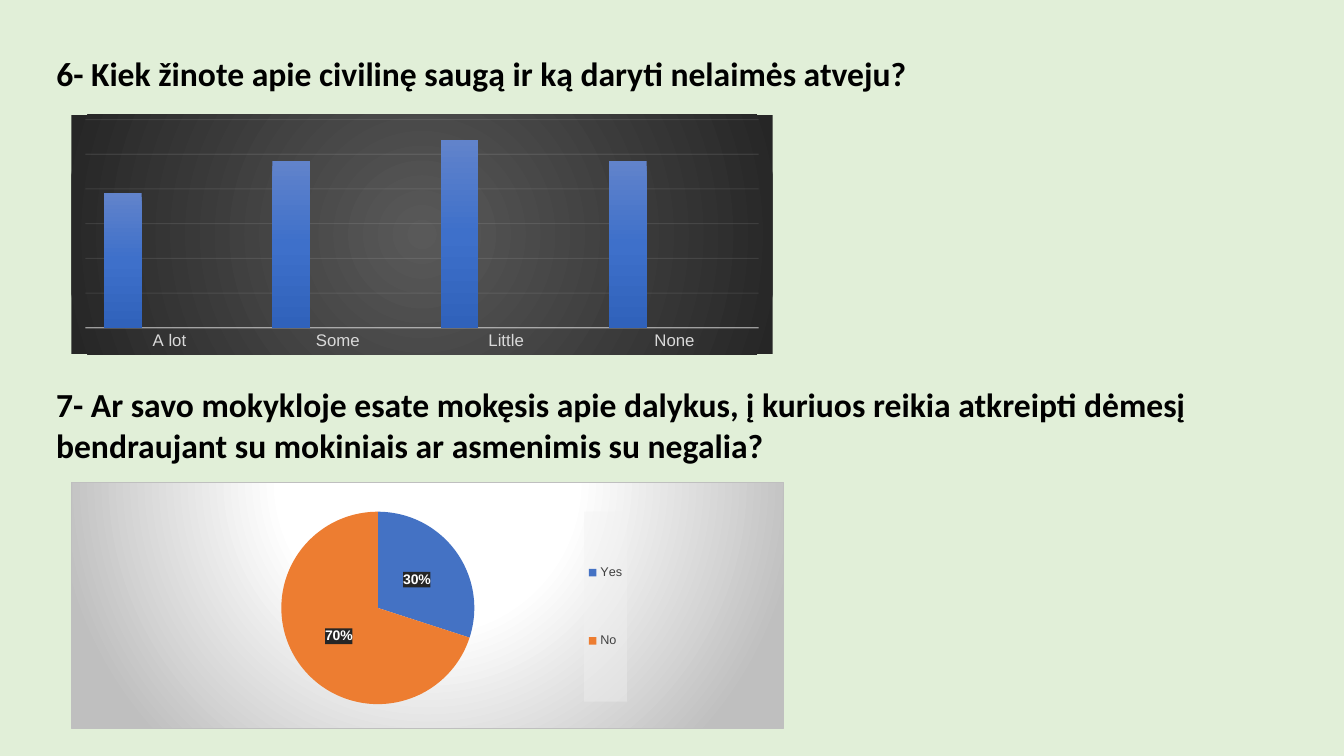
from lxml import etree
from pptx import Presentation
from pptx.chart.data import CategoryChartData
from pptx.dml.color import RGBColor
from pptx.enum.chart import XL_CHART_TYPE as ChartType, XL_LABEL_POSITION as LabelPos
from pptx.enum.chart import XL_LEGEND_POSITION as LegendPos, XL_TICK_MARK as TickMark
from pptx.enum.text import MSO_ANCHOR as Anchor, MSO_AUTO_SIZE as AutoSize, PP_ALIGN as Align
from pptx.oxml import parse_xml
from pptx.oxml.ns import nsdecls, qn
from pptx.util import Pt


def color(value):
    return RGBColor.from_string(value)


def style_font(font, name, size, value, bold=False):
    font.name, font.size, font.bold = name, Pt(size), bold
    font.color.rgb = color(value)


def solid_xml(value, alpha=100):
    return (f'<a:solidFill><a:srgbClr val="{value}"><a:alpha val="{alpha * 1000}"/>'
            '</a:srgbClr></a:solidFill>')


def gradient_xml(stops, focus=None):
    """Radial around the focus (left, top, right, bottom), else top to bottom."""
    marks = "".join(f'<a:gs pos="{position * 1000}"><a:srgbClr val="{value}"/></a:gs>'
                    for position, value in stops)
    shade = '<a:lin ang="5400000" scaled="0"/>'
    if focus:
        sides = " ".join(f'{side}="{part * 1000}"' for side, part in zip("ltrb", focus))
        shade = f'<a:path path="circle"><a:fillToRect {sides}/></a:path>'
    return f'<a:gradFill rotWithShape="1"><a:gsLst>{marks}</a:gsLst>{shade}</a:gradFill>'


def set_background(element, fill, line="<a:ln><a:noFill/></a:ln>"):
    """Shape properties come just before the text properties."""
    element.find(qn("c:txPr")).addprevious(
        parse_xml(f'<c:spPr {nsdecls("c", "a")}>{fill}{line}</c:spPr>'))


def set_layout(parent, index, box, inner=False):
    for old in parent.findall(qn("c:layout")):
        parent.remove(old)
    target = '<c:layoutTarget val="inner"/>' if inner else ""
    modes = '<c:xMode val="edge"/><c:yMode val="edge"/>'
    sizes = "".join(f'<c:{name} val="{part}"/>' for name, part in zip("xywh", box))
    parent.insert(index, parse_xml(
        f'<c:layout {nsdecls("c")}><c:manualLayout>{target}{modes}{sizes}'
        '</c:manualLayout></c:layout>'))


def style_line(line, value, width, alpha):
    line.width = Pt(width)
    line.color.rgb = color(value)
    mark = next(line.fill._xPr.iter(qn("a:srgbClr")))
    etree.SubElement(mark, qn("a:alpha")).set("val", str(alpha * 1000))


def format_heading(shape, box, text):
    shape.left, shape.top, shape.width, shape.height = map(Pt, box)
    frame = shape.text_frame
    frame.text = text
    frame.word_wrap, frame.auto_size = True, AutoSize.NONE
    frame.vertical_anchor = Anchor.TOP
    frame.margin_left = frame.margin_right = Pt(7.2)
    frame.margin_top = frame.margin_bottom = Pt(3.6)
    para = frame.paragraphs[0]
    para.alignment = Align.LEFT
    para.line_spacing, para.space_before = 1.0, Pt(0)
    style_font(para.runs[0].font, "Calibri", 24, "000000", True)


def add_chart(page, kind, box, categories, series):
    data = CategoryChartData()
    data.categories = categories
    for number, values in enumerate(series, 1):
        data.add_series(f"Series {number}", values)
    chart = page.shapes.add_chart(kind, *map(Pt, box), data).chart
    chart.has_title = chart.has_legend = False
    style_font(chart.font, "Arial", 10, "000000")
    return chart


def add_knowledge_chart(page, box):
    blank = [None] * 4
    chart = add_chart(page, ChartType.COLUMN_CLUSTERED, box,
                      ["A lot", "Some", "Little", "None"],
                      [[72, 89, 100, 89], blank, blank])
    space = chart._chartSpace
    set_background(space, gradient_xml([(0, "595959"), (100, "262626")], (50, 50, 50, 50)))
    set_layout(space.chart.plotArea, 0, (0.02, 0.02, 0.96, 0.87), True)

    # Bars
    plot = chart.plots[0]
    plot.gap_width, plot.overlap, plot.vary_by_categories = 100, -24, False
    shades = [("6183CB", "3E70CA", "3062BB"), ("F18C57", "F67B28", "E56C19"),
              ("AFAFAF", "A5A5A5", "939393")]
    for bars, tones in zip(plot.series, shades):
        fill = gradient_xml(zip((0, 50, 100), tones))
        fill = fill.replace("<a:gradFill", f'<a:gradFill {nsdecls("a")}', 1)
        bars._element.get_or_add_spPr().append(parse_xml(fill))

    # Axes
    axis = chart.category_axis
    axis.major_tick_mark = TickMark.NONE
    style_font(axis.tick_labels.font, "Arial", 12, "D9D9D9")
    style_line(axis.format.line, "F2F2F2", 1, 54)
    scale = chart.value_axis
    scale.minimum_scale, scale.maximum_scale, scale.major_unit = 0, 111, 18.5
    scale.has_major_gridlines = True
    style_line(scale.major_gridlines.format.line, "F2F2F2", 0.75, 10)
    scale.visible = False


def add_school_chart(page, box):
    chart = add_chart(page, ChartType.PIE, box, ["Yes", "No"], [[30, 70]])
    space = chart._chartSpace
    set_background(space,
                   gradient_xml([(0, "FFFFFF"), (39, "FFFFFF"), (100, "BFBFBF")],
                                (50, -80, 50, 180)),
                   f'<a:ln w="9525">{solid_xml("BFBFBF")}</a:ln>')
    set_layout(space.chart.plotArea, 0, (0.28, 0.12, 0.3, 0.78), True)

    # Slices and their shares
    plot = chart.plots[0]
    for index, value in enumerate(["4472C4", "ED7D31"]):
        fill = plot.series[0].points[index].format.fill
        fill.solid()
        fill.fore_color.rgb = color(value)
    labels = plot.series[0].data_labels
    labels.show_percentage, labels.show_value = True, False
    labels.number_format, labels.number_format_is_linked = "0%", False
    labels.position = LabelPos.CENTER
    style_font(labels.font, "Arial", 10, "FFFFFF", True)
    set_background(labels._element, solid_xml("262626", 75))

    # Legend
    chart.has_legend = True
    legend = chart.legend
    legend.position, legend.include_in_layout = LegendPos.RIGHT, False
    style_font(legend.font, "Arial", 9, "404040")
    set_background(legend._element, solid_xml("F2F2F2", 39))
    set_layout(legend._element, 1, (0.72, 0.12, 0.06, 0.77))


def add_survey_slide(deck):
    page = deck.slides.add_slide(deck.slide_layouts[5])
    page.background.fill.solid()
    page.background.fill.fore_color.rgb = color("E1EFD8")
    # Question 6
    format_heading(page.shapes.title, (33, 34.5, 886, 36),
                   "6- Kiek žinote apie civilinę saugą ir ką daryti nelaimės atveju?")
    add_knowledge_chart(page, (51, 82, 501, 171))
    # Question 7
    format_heading(page.shapes.add_textbox(0, 0, 0, 0), (33, 271, 878, 65.5),
                   "7- Ar savo mokykloje esate mokęsis apie dalykus, į kuriuos reikia atkreipti "
                   "dėmesį bendraujant su mokiniais ar asmenimis su negalia?")
    add_school_chart(page, (51, 344, 509, 177))


def main():
    deck = Presentation()
    deck.slide_width, deck.slide_height = Pt(960), Pt(540)
    add_survey_slide(deck)
    deck.save("out.pptx")


if __name__ == "__main__":
    main()
